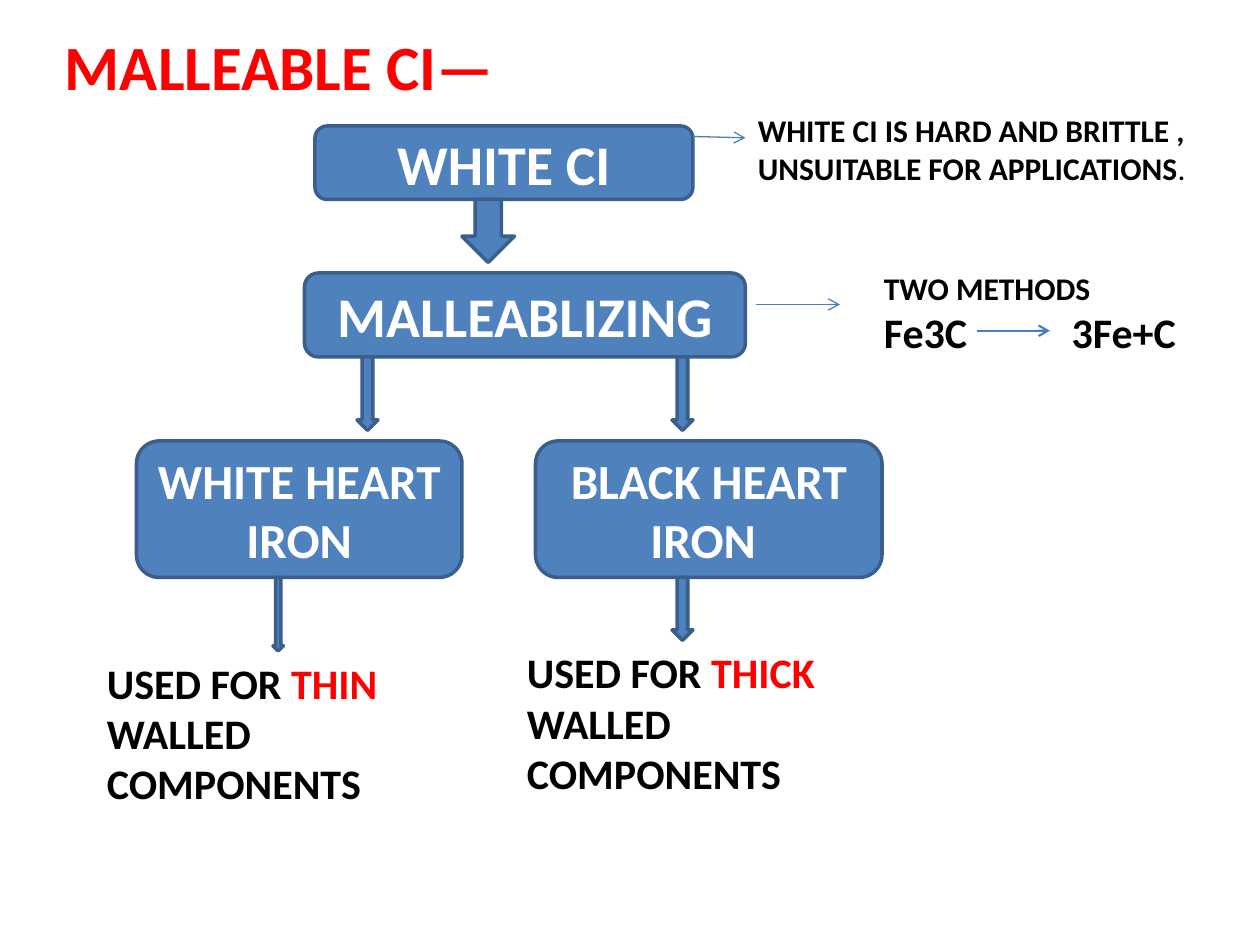
import pptx
import pptx.dml.color
import pptx.enum.shapes
import pptx.enum.text
import pptx.oxml.ns
import pptx.util
import lxml.etree

EMU_PER_PX = 9525
BLACK, RED, WHITE = "000000", "FF0000", "FFFFFF"


def px(length):
    return pptx.util.Emu(length * EMU_PER_PX)


def color(value):
    return pptx.dml.color.RGBColor.from_string(value)


def add_xml(parent, tag, **attributes):
    return lxml.etree.SubElement(parent, pptx.oxml.ns.qn(tag), attributes)


def set_format(target, values):
    for name, value in values.items():
        setattr(target, name, value)


class FlowSlide:
    font = "Calibri"
    fill = "4F81BD"
    outline = "3A5F8C"
    line = "4B7EBC"

    def __init__(self, presentation):
        self.slide = presentation.slides.add_slide(presentation.slide_layouts[6])

    def add_runs(self, paragraph, runs, size):
        for text, text_color, bold in runs:
            run = paragraph.add_run()
            run.text = text
            set_format(run.font, {"name": self.font, "size": pptx.util.Pt(size), "bold": bold})
            run.font.color.rgb = color(text_color)

    def text(self, bounds, paragraphs, tab=None):
        shape = self.slide.shapes.add_textbox(*map(px, bounds))
        frame = shape.text_frame
        set_format(frame, {
            "word_wrap": True,
            "auto_size": pptx.enum.text.MSO_AUTO_SIZE.SHAPE_TO_FIT_TEXT,
        })
        for index, (size, runs) in enumerate(paragraphs):
            paragraph = frame.add_paragraph() if index else frame.paragraphs[0]
            self.add_runs(paragraph, runs, size)
            if tab:
                tabs = add_xml(paragraph._p.get_or_add_pPr(), "a:tabLst")
                add_xml(tabs, "a:tab", pos=str(px(tab)), algn="l")

    def block(self, kind, bounds):
        shape = self.slide.shapes.add_shape(kind, *map(px, bounds))
        shape.shadow.inherit = False
        shape.fill.solid()
        shape.fill.fore_color.rgb = color(self.fill)
        shape.line.color.rgb = color(self.outline)
        shape.line.width = pptx.util.Pt(2)
        return shape

    def box(self, bounds, label, size):
        shape = self.block(pptx.enum.shapes.MSO_SHAPE.ROUNDED_RECTANGLE, bounds)
        frame = shape.text_frame
        set_format(frame, {
            "word_wrap": True,
            "vertical_anchor": pptx.enum.text.MSO_ANCHOR.MIDDLE,
        })
        paragraph = frame.paragraphs[0]
        paragraph.alignment = pptx.enum.text.PP_ALIGN.CENTER
        self.add_runs(paragraph, [(label, WHITE, True)], size)

    def down_arrow(self, bounds):
        self.block(pptx.enum.shapes.MSO_SHAPE.DOWN_ARROW, bounds)

    def arrow(self, start, end, width):
        connector = self.slide.shapes.add_connector(
            pptx.enum.shapes.MSO_CONNECTOR.STRAIGHT, *map(px, start + end))
        connector.line.color.rgb = color(self.line)
        connector.line.width = pptx.util.Pt(width)
        add_xml(connector.line._get_or_add_ln(), "a:tailEnd", type="arrow")
        add_xml(connector._element.spPr, "a:effectLst")


def main():
    presentation = pptx.Presentation()
    set_format(presentation, {"slide_width": px(960), "slide_height": px(720)})
    flow = FlowSlide(presentation)

    flow.text((40, 16, 864, 68), [(36, [("MALLEABLE CI—", RED, True)])])

    for bounds, label, size in [
        ((240, 96, 288, 56), "WHITE CI", 32),
        ((232, 208, 336, 64), "MALLEABLIZING", 32),
        ((104, 336, 248, 104), "WHITE HEART IRON", 28),
        ((408, 336, 264, 104), "BLACK HEART IRON ", 28),
    ]:
        flow.box(bounds, label, size)

    for bounds in [
        (352, 152, 40, 48),
        (272, 272, 16, 56),
        (512, 272, 16, 56),
        (208, 440, 8, 56),
        (512, 440, 16, 48),
    ]:
        flow.down_arrow(bounds)

    flow.text((568, 80, 376, 68), [(18, [
        ("WHITE CI IS HARD AND BRITTLE , UNSUITABLE FOR APPLICATIONS", BLACK, True),
        (".", BLACK, False),
    ])])
    flow.text((664, 200, 272, 78), [
        (18, [("TWO METHODS", BLACK, True)]),
        (24, [("Fe3C\t3Fe+C", BLACK, True)]),
    ], tab=143)

    for bounds, thickness in [
        ((72, 496, 272, 126), "THIN"),
        ((392, 488, 304, 126), "THICK"),
    ]:
        flow.text(bounds, [(24, [
            ("USED FOR ", BLACK, True),
            (thickness, RED, True),
            (" WALLED COMPONENTS", BLACK, True),
        ])])

    for start, end, width in [
        ((528, 104), (568, 105), 0.75),
        ((576, 232), (640, 232), 0.75),
        ((744, 252), (800, 252), 1.25),
    ]:
        flow.arrow(start, end, width)

    presentation.save("out.pptx")


if __name__ == "__main__":
    main()
